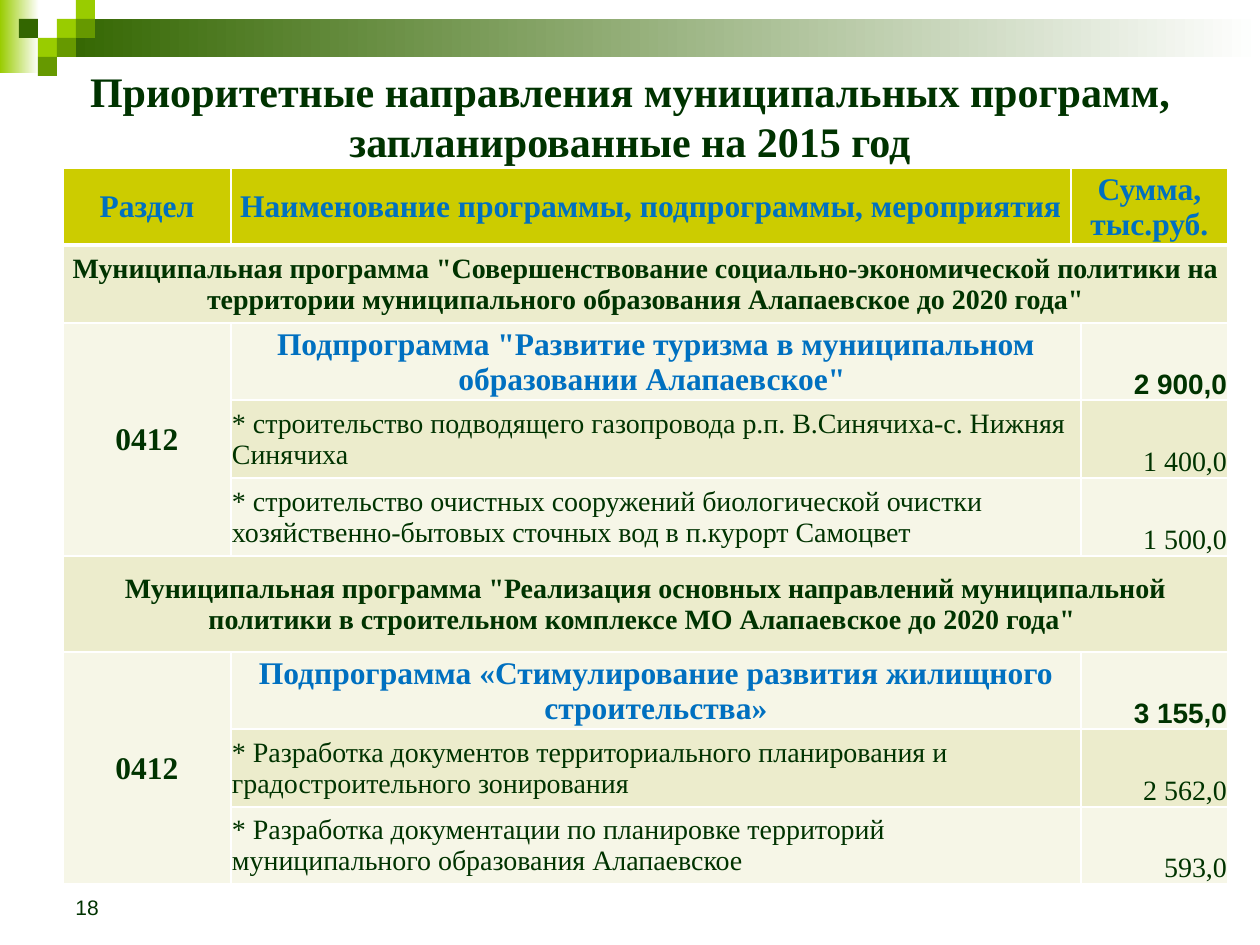
from dataclasses import dataclass

from lxml import etree
from pptx import Presentation
from pptx import util as u
from pptx.dml.color import RGBColor
from pptx.enum import shapes, text
from pptx.oxml.ns import qn

PX = 914400 / 126  # EMU in one px


@dataclass(frozen=True)
class Theme:
    serif: str = "Times New Roman"
    sans: str = "Arial"
    ink: str = "003300"
    accent: str = "0070C0"
    white: str = "FFFFFF"
    header: str = "CCCC00"
    band: str = "ECECCC"
    light: str = "F6F6E7"
    lime: str = "99CC00"
    leaf: str = "669900"
    forest: str = "336600"
    title_pt: int = 24
    head_pt: int = 18
    body_pt: int = 16
    number_pt: int = 12


T = Theme()
CENTER, LEFT, RIGHT = text.PP_ALIGN.CENTER, text.PP_ALIGN.LEFT, text.PP_ALIGN.RIGHT
MIDDLE, BOTTOM = text.MSO_ANCHOR.MIDDLE, text.MSO_ANCHOR.BOTTOM

# Text formats: font attributes, colour, alignment
HEAD = dict(name=T.serif, size=T.head_pt, bold=True, color=T.accent, align=CENTER)
TITLE = {**HEAD, "size": T.title_pt, "color": T.ink}
CODE = {**HEAD, "color": T.ink}
PROGRAM = {**CODE, "size": T.body_pt}
ITEM = {**PROGRAM, "bold": False, "align": LEFT}
AMOUNT = {**ITEM, "align": RIGHT}
TOTAL = {**AMOUNT, "name": T.sans, "bold": True}
NUMBER = {**ITEM, "name": T.sans, "size": T.number_pt}

COLUMNS = ["Раздел", "Наименование программы, подпрограммы, мероприятия", "Сумма, тыс.руб."]
# Program, section code, then (name, amount): the subprogram and its measures
PROGRAMS = [
    ('Муниципальная программа "Совершенствование социально-экономической политики на '
     'территории муниципального образования Алапаевское до 2020 года"', "0412", [
         ('Подпрограмма "Развитие туризма в муниципальном образовании Алапаевское" ', "2 900,0"),
         ("* строительство подводящего газопровода р.п. В.Синячиха-с. Нижняя Синячиха", "1 400,0"),
         ("* строительство очистных сооружений биологической очистки "
          "хозяйственно-бытовых сточных вод в п.курорт Самоцвет", "1 500,0")]),
    ('Муниципальная программа "Реализация основных направлений муниципальной '
     'политики в строительном комплексе МО Алапаевское до 2020 года" ', "0412", [
         ("Подпрограмма «Стимулирование развития жилищного строительства»", "3 155,0"),
         ("* Разработка документов территориального планирования и "
          "градостроительного зонирования", "2 562,0"),
         ("* Разработка документации по планировке территорий "
          "муниципального образования Алапаевское", "593,0")]),
]
COL_WIDTHS = [168, 840, 10, 147]
ROW_HEIGHTS = [77, 78, 77, 78, 78, 96, 77, 78, 77]


def emu(*lengths):
    return [u.Emu(round(n * PX)) for n in lengths]


def rgb(value):
    return RGBColor.from_string(value)


def write(tf, words, fmt):
    p = tf.paragraphs[0]
    p.alignment = fmt["align"]
    r = p.add_run()
    r.text = words
    font = dict(name=fmt["name"], size=u.Pt(fmt["size"]), bold=fmt["bold"])
    for key, value in font.items():
        setattr(r.font, key, value)
    r.font.color.rgb = rgb(fmt["color"])


def add_rect(s, box, *colors):
    """One colour gives a solid fill, two a left-to-right gradient."""
    sp = s.shapes.add_shape(shapes.MSO_SHAPE.RECTANGLE, *emu(*box))
    sp.shadow.inherit = False
    sp.line.fill.background()
    if len(colors) == 1:
        sp.fill.solid()
        sp.fill.fore_color.rgb = rgb(colors[0])
    else:
        sp.fill.gradient()
        sp.fill.gradient_angle = 0
        for stop, color, position in zip(sp.fill.gradient_stops, colors, (0, 1)):
            stop.color.rgb = rgb(color)
            stop.position = position


def add_banner(s, x, y, w):
    # Fading strips
    step = 19
    add_rect(s, (x, y, 39, 73), T.lime, T.white)
    add_rect(s, (x + 3 * step, y + step, w - 3 * step, 2 * step), T.forest, T.white)
    # Mosaic of squares: column, row, colour
    for col, row, color in [(3, 1, T.lime), (4, 0, T.lime), (4, 1, T.leaf), (2, 2, T.lime),
                            (1, 1, T.forest), (3, 2, T.leaf), (2, 3, T.leaf)]:
        add_rect(s, (x + col * step, y + row * step, step, step), color)


def add_title(s, box, words):
    sp = s.shapes.title
    sp.left, sp.top, sp.width, sp.height = emu(*box)
    tf = sp.text_frame
    for key, value in dict(word_wrap=True, vertical_anchor=MIDDLE,
                           auto_size=text.MSO_AUTO_SIZE.NONE).items():
        setattr(tf, key, value)
    write(tf, words, TITLE)


def set_borders(cell, **widths):
    """White borders, 1 pt unless a side (L, R, T, B) is given."""
    tc_pr = cell._tc.get_or_add_tcPr()
    for i, side in enumerate("LRTB"):
        ln = etree.Element(qn("a:ln" + side), w=str(u.Pt(widths.get(side, 1))))
        fill = etree.SubElement(ln, qn("a:solidFill"))
        etree.SubElement(fill, qn("a:srgbClr"), val=T.white)
        tc_pr.insert(i, ln)


def add_program_table(s, x, y):
    frame = s.shapes.add_table(len(ROW_HEIGHTS), len(COL_WIDTHS),
                               *emu(x, y, sum(COL_WIDTHS), sum(ROW_HEIGHTS)))
    table = frame.table
    for col, width in zip(table.columns, emu(*COL_WIDTHS)):
        col.width = width
    for row, height in zip(table.rows, emu(*ROW_HEIGHTS)):
        row.height = height

    # Fills alternate in each group of four rows below the header
    for i, row in enumerate(table.rows):
        color = T.header if i == 0 else T.band if (i - 1) % 4 in (0, 2) else T.light
        for j, cell in enumerate(row.cells):
            in_code = j == 0 and i > 0 and (i - 1) % 4
            cell.fill.solid()
            cell.fill.fore_color.rgb = rgb(T.light if in_code else color)
            set_borders(cell, **({"B": 3} if i == 0 else {"T": 3} if i == 1 else {}))
            cell.margin_left, cell.margin_right, cell.margin_top, cell.margin_bottom = emu(1, 1, 1, 0)

    def put(row, col, words, fmt, rows=1, cols=1, anchor=MIDDLE):
        cell = table.cell(row, col)
        if rows * cols > 1:
            cell.merge(table.cell(row + rows - 1, col + cols - 1))
        cell.vertical_anchor = anchor
        write(cell.text_frame, words, fmt)

    # Header
    for col, words in enumerate(COLUMNS):
        put(0, col, words, HEAD, cols=2 if col == 2 else 1)
    # Programs
    for k, (program, code, lines) in enumerate(PROGRAMS):
        top = 1 + 4 * k
        put(top, 0, program, PROGRAM, cols=4)
        put(top + 1, 0, code, CODE, rows=3)
        for n, (name, amount) in enumerate(lines):
            put(top + 1 + n, 1, name, ITEM if n else HEAD, cols=2)
            put(top + 1 + n, 3, amount, AMOUNT if n else TOTAL, anchor=BOTTOM)


def add_page_number(s, box, words):
    tf = s.shapes.add_textbox(*emu(*box)).text_frame
    tf.word_wrap = True
    tf.vertical_anchor = BOTTOM
    write(tf, words, NUMBER)


def main():
    prs = Presentation()
    prs.slide_width, prs.slide_height = emu(1260, 945)
    s = prs.slides.add_slide(prs.slide_layouts[5])
    add_banner(s, 0, 0, 1260)
    add_title(s, (63, 63, 1134, 105),
              "Приоритетные направления муниципальных программ, запланированные на 2015 год")
    add_program_table(s, 63, 168)
    add_page_number(s, (63, 861, 294, 65), "18")
    prs.save("out.pptx")


if __name__ == "__main__":
    main()
